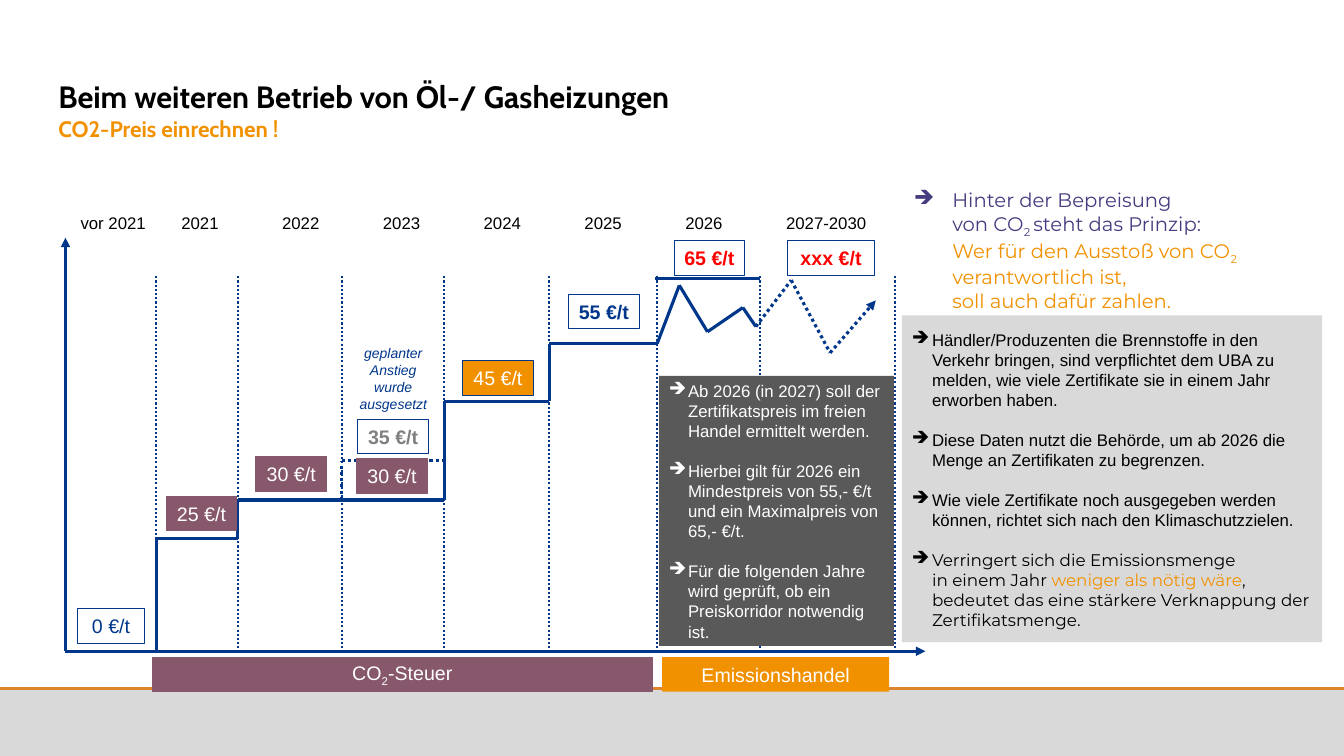
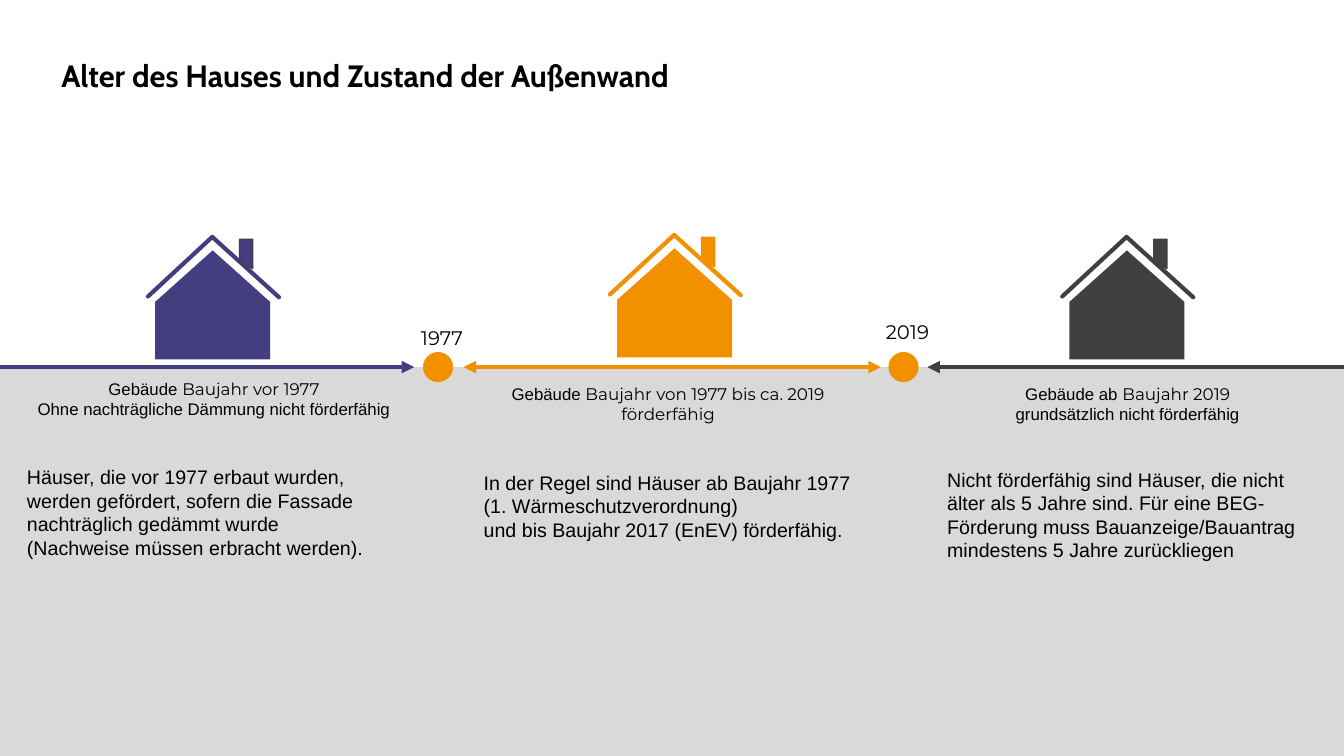
import copy
import dataclasses
import itertools
import typing

import lxml.etree
import pptx
import pptx.dml.color
import pptx.enum.dml
import pptx.enum.shapes
import pptx.enum.text
import pptx.oxml.ns
import pptx.util

Cm = pptx.util.Cm
Pt = pptx.util.Pt
SHAPE = pptx.enum.shapes.MSO_SHAPE
ALIGN = pptx.enum.text.PP_ALIGN
ANCHOR = pptx.enum.text.MSO_ANCHOR
DOTTED = pptx.enum.dml.MSO_LINE.ROUND_DOT


@dataclasses.dataclass(frozen=True)
class Theme:
    """Colours, fonts, type sizes and page size in centimetres."""
    black: str = "000000"
    white: str = "FFFFFF"
    band: str = "D9D9D9"
    rule: str = "DE842D"
    orange: str = "F29100"
    violet: str = "443D7F"
    blue: str = "00378B"
    plum: str = "87586B"
    slate: str = "595959"
    dark: str = "404040"
    muted: str = "808080"
    red: str = "FF0000"
    sans: str = "Arial"
    display: str = "Cabin"
    accent: str = "Montserrat"
    title: int = 22
    subtitle: int = 16
    body: int = 14
    small: int = 12
    note: int = 10
    width: float = 33.87
    height: float = 19.05


T = Theme()


@dataclasses.dataclass
class Box:
    """A region of a slide with its top left corner in centimetres."""
    s: typing.Any
    x: float = 0
    y: float = 0

    def at(self, x, y):
        """Return slide coordinates of a point in the region."""
        return Cm(self.x + x), Cm(self.y + y)


@dataclasses.dataclass
class Run:
    """A piece of text in one style."""
    text: str
    size: int = T.small
    color: str = T.black
    font: str = T.sans
    bold: bool = False
    italic: bool = False
    sub: bool = False


@dataclasses.dataclass
class Para:
    """A paragraph with alignment, hanging bullet indent and space before."""
    runs: list
    align: typing.Any = ALIGN.LEFT
    indent: float = 0
    before: float = 0
    tabs: tuple = ()


def rgb(color):
    """Return an RGB colour object."""
    return pptx.dml.color.RGBColor.from_string(color)


def child(parent, tag, **attributes):
    """Append a DrawingML element."""
    return lxml.etree.SubElement(parent, pptx.oxml.ns.qn("a:" + tag), **attributes)


def add_run(p, run):
    """Add a styled run, with line breaks in the same style."""
    lines = run.text.split("\n")
    for i, line in enumerate(lines):
        if line:
            r = p.add_run()
            r.text = line
            r.font.size, r.font.name = Pt(run.size), run.font
            r.font.bold, r.font.italic = run.bold, run.italic
            r.font.color.rgb = rgb(run.color)
            if run.sub:
                r._r.get_or_add_rPr().set("baseline", "-25000")
        if i < len(lines) - 1:
            p.add_line_break()
            p._p[-1].append(copy.deepcopy(r._r.rPr))


def write(tf, paras):
    """Fill a text frame with paragraphs."""
    tf.word_wrap = True
    for i, para in enumerate(paras):
        p = tf.paragraphs[0] if i == 0 else tf.add_paragraph()
        p.alignment = para.align
        if para.before:
            p.space_before = Pt(para.before)
        pPr = p._p.get_or_add_pPr()
        if para.indent:
            pPr.set("marL", str(Cm(para.indent)))
            pPr.set("indent", str(-Cm(para.indent)))
            child(pPr, "buChar", char="➔")
        if para.tabs:
            stops = child(pPr, "tabLst")
            for stop in para.tabs:
                child(stops, "tab", pos=str(Cm(stop)), algn="l")
        for run in para.runs:
            add_run(p, run)


def text(box, x, y, w, h, paras):
    """Place a text box."""
    tb = box.s.shapes.add_textbox(*box.at(x, y), Cm(w), Cm(h))
    write(tb.text_frame, paras)


def shape(box, x, y, w, h, fill=None, line=None, weight=0.75, kind=SHAPE.RECTANGLE):
    """Place a preset shape."""
    sp = box.s.shapes.add_shape(kind, *box.at(x, y), Cm(w), Cm(h))
    sp.shadow.inherit = False
    if fill:
        sp.fill.solid()
        sp.fill.fore_color.rgb = rgb(fill)
    else:
        sp.fill.background()
    if line:
        sp.line.color.rgb = rgb(line)
        sp.line.width = Pt(weight)
    else:
        sp.line.fill.background()
    return sp


def label(box, x, y, w, runs, fill=None, line=None):
    """Place a one-line label in a rectangle."""
    sp = shape(box, x, y, w, 0.87, fill, line)
    tf = sp.text_frame
    tf.margin_left = tf.margin_right = tf.margin_top = tf.margin_bottom = 0
    tf.vertical_anchor = ANCHOR.MIDDLE
    write(tf, [Para(runs, ALIGN.CENTER)])


def lines(box, points, color=T.blue, weight=2.25, dash=None, head=False, tail=False, cap="flat"):
    """Join points by connectors, with optional arrowheads at the ends."""
    segments = list(itertools.pairwise(points))
    for i, (start, end) in enumerate(segments):
        c = box.s.shapes.add_connector(
            pptx.enum.shapes.MSO_CONNECTOR.STRAIGHT, *box.at(*start), *box.at(*end))
        c.line.color.rgb = rgb(color)
        c.line.width = Pt(weight)
        if dash:
            c.line.dash_style = dash
        ln = c.line._get_or_add_ln()
        ln.set("cap", cap)
        if head and i == 0:
            child(ln, "headEnd", type="triangle")
        if tail and i == len(segments) - 1:
            child(ln, "tailEnd", type="triangle")
        child(c._element.spPr, "effectLst")


def new_slide(prs):
    """Add a blank slide with the footer band."""
    s = prs.slides.add_slide(prs.slide_layouts[6])
    footer = Box(s, 0, 17.35)
    shape(footer, 0, 0, T.width, 1.7, T.band)
    lines(footer, [(0, 0), (T.width, 0)], T.rule, 1.5)
    return s


def title(box, heading, subtitle=None):
    """Place the heading and an optional second line."""
    paras = [Para([Run(heading, T.title, font=T.display, bold=True)])]
    if subtitle:
        paras.append(Para([Run(subtitle, T.subtitle, T.orange, T.display, True)]))
    text(box, 0, 0, 31.9, 2, paras)


def bullets(items, indent, color=T.black):
    """Turn lists of runs or plain strings into spaced bullet paragraphs."""
    return [Para([Run(item, color=color)] if isinstance(item, str) else item,
                 indent=indent, before=14 if i else 0)
            for i, item in enumerate(items)]


def price_chart(box):
    """Draw the stepped price path with its axes, labels and remarks."""
    base, top = 11.18, 1.73
    years = ["vor 2021", *map(str, range(2021, 2027)), "2027-2030"]
    tabs = tuple(2.54 * i for i in range(1, len(years)))
    text(box, 0.13, 0, 23.34, 0.76, [Para([Run("\t".join(years))], tabs=tabs)])
    lines(box, [(0, base), (0, 0.76)], tail=True)
    lines(box, [(0, base), (21.67, base)], tail=True)
    for x in (2.29, 4.34, 6.96, 9.55, 12.19, 14.91, 17.5, 20.91):
        lines(box, [(x, top), (x, base + 0.05)], weight=1.5, dash=DOTTED)

    lines(box, [(2.29, base), (2.29, 8.33), (4.34, 8.33), (4.34, 7.37), (9.55, 7.37),
                (9.55, 4.88), (12.19, 4.88), (12.19, 3.43), (14.91, 3.43),
                (15.47, 1.96), (16.18, 3.13), (17.07, 2.52), (17.4, 3)])
    lines(box, [(14.86, 1.78), (17.5, 1.78)])
    lines(box, [(6.96, 7.37), (6.96, 6.38), (9.55, 6.38)], dash=DOTTED)
    lines(box, [(17.4, 3), (18.29, 1.83), (19.27, 3.66), (20.42, 2.34)], dash=DOTTED, tail=True)

    prices = [
        (0.31, 10.11, 1.68, "0 €/t", T.blue, False, None, T.blue),
        (2.54, 7.27, 1.78, "25 €/t", T.white, False, T.plum, T.plum),
        (4.8, 6.28, 1.78, "30 €/t", T.white, False, T.plum, T.plum),
        (7.34, 6.33, 1.78, "30 €/t", T.white, False, T.plum, T.plum),
        (7.37, 5.34, 1.78, "35 €/t", T.muted, True, None, T.blue),
        (10.01, 3.86, 1.78, "45 €/t", T.white, False, T.orange, T.blue),
        (12.68, 2.19, 1.78, "55 €/t", T.blue, True, None, T.blue),
        (15.34, 0.84, 1.78, "65 €/t", T.red, True, None, T.blue),
        (18.19, 0.84, 2.21, "xxx €/t", T.red, True, None, T.blue),
    ]
    for x, y, w, price, color, bold, fill, line in prices:
        label(box, x, y, w, [Run(price, T.body, color, bold=bold)], fill, line)

    white = [Run(t, T.body, T.white, sub=t == "2") for t in ("CO", "2", "-Steuer")]
    label(box, 2.19, 11.33, 12.6, white, T.plum, T.plum)
    label(box, 15.04, 11.33, 5.72, [Run("Emissionshandel", T.body, T.white)], T.orange)

    text(box, 7.09, 3.33, 2.34, 1.96, [Para(
        [Run("geplanter Anstieg wurde ausgesetzt", T.note, T.blue, italic=True)], ALIGN.CENTER)])
    remarks = shape(box, 14.96, 4.24, 5.92, 6.81, T.slate)
    remarks.text_frame.vertical_anchor = ANCHOR.MIDDLE
    write(remarks.text_frame, bullets([
        "Ab 2026 (in 2027) soll der Zertifikatspreis im freien Handel ermittelt werden.",
        "Hierbei gilt für 2026 ein Mindestpreis von 55,- €/t und ein Maximalpreis von 65,- €/t.",
        "Für die folgenden Jahre wird geprüft, ob ein Preiskorridor notwendig ist.",
    ], 0.48, T.white))


def principle_panel(box):
    """Place the principle and the grey panel of explanations."""
    principle = [
        ("Hinter der Bepreisung \nvon CO", T.violet), ("2 ", T.violet),
        ("steht das Prinzip: \n", T.violet), ("Wer für den Ausstoß von CO", T.orange),
        ("2 ", T.orange), ("verantwortlich ist, \nsoll auch dafür zahlen.", T.orange)]
    text(box, 0.05, 0, 10.72, 3.5, [Para(
        [Run(t, T.body, c, T.accent, sub=t == "2 ") for t, c in principle], indent=0.97)])
    shape(box, 0, 3.33, 10.59, 8.23, T.band)
    text(box, 0, 3.56, 10.74, 7.95, bullets([
        "Händler/Produzenten die Brennstoffe in den Verkehr bringen, sind verpflichtet dem UBA "
        "zu melden, wie viele Zertifikate sie in einem Jahr erworben haben.",
        "Diese Daten nutzt die Behörde, um ab 2026 die Menge an Zertifikaten zu begrenzen.",
        "Wie viele Zertifikate noch ausgegeben werden können, richtet sich nach den "
        "Klimaschutzzielen.",
        [Run("Verringert sich die Emissionsmenge \nin einem Jahr ", font=T.accent),
         Run("weniger als nötig wäre", color=T.orange, font=T.accent),
         Run(", bedeutet das eine stärkere Verknappung der Zertifikatsmenge.", font=T.accent)],
    ], 0.51))


def house(box, color, edge):
    """Draw a house with roof and chimney."""
    shape(box, 0.18, 0.34, 2.9, 1.3, color, kind=SHAPE.ISOSCELES_TRIANGLE)
    shape(box, 0.18, 1.64, 2.9, 1.45, color)
    lines(box, [(0, 1.5), (1.62, 0), (3.3, 1.52)], color, 3, cap="rnd")
    chimney = shape(box, 2.31, 0.06, 0.33, 0.74, color, edge, 1, SHAPE.FLOWCHART_MANUAL_INPUT)
    chimney._element.spPr.xfrm.set("flipV", "1")


def period(box, w, caption, body, gap):
    """Place a centred two-line caption above a paragraph of body text."""
    paras = [Para(runs, ALIGN.CENTER) for runs in caption]
    paras += [Para([Run(t, T.body)], before=0 if i else gap) for i, t in enumerate(body)]
    text(box, 0, 0, w, 4.8, paras)


def timeline(box):
    """Draw the arrows and the dated dots along the edge of the band."""
    lines(box, [(0, 0), (10.44, 0)], T.violet, 3, tail=True)
    lines(box, [(11.68, 0), (22.2, 0)], T.orange, 3, head=True, tail=True)
    lines(box, [(T.width, 0), (23.37, 0)], T.dark, 3, tail=True)
    for x, year, y in ((11.04, "1977", -1.17), (22.77, "2019", -1.32)):
        shape(box, x - 0.37, -0.37, 0.74, 0.74, T.orange, T.orange, 0.5, SHAPE.OVAL)
        text(box, x - 1.12, y, 2.44, 0.86,
             [Para([Run(year, T.body, font=T.accent)], ALIGN.CENTER)])


def price_slide(prs):
    """Build the slide on the carbon price."""
    s = new_slide(prs)
    title(Box(s, 1.22, 1.84), "Beim weiteren Betrieb von Öl-/ Gasheizungen",
          "CO2-Preis einrechnen !")
    price_chart(Box(s, 1.65, 5.23))
    principle_panel(Box(s, 22.73, 4.62))


def age_slide(prs):
    """Build the slide on the age of the house."""
    s = new_slide(prs)
    shape(Box(s, 0, 9.25), 0, 0, T.width, 8.28, T.band)
    title(Box(s, 1.3, 1.3), "Alter des Hauses und Zustand der Außenwand")
    period(Box(s, 0.43, 9.42), 9.93,
           [[Run("Gebäude "), Run("Baujahr vor 1977", font=T.accent)],
            [Run("Ohne nachträgliche Dämmung nicht förderfähig")]],
           ["Häuser, die vor 1977 erbaut wurden, werden gefördert, sofern die Fassade "
            "nachträglich gedämmt wurde", "(Nachweise müssen erbracht werden)."], 33)
    period(Box(s, 11.94, 9.55), 9.8,
           [[Run("Gebäude "), Run("Baujahr von 1977 bis ca. 2019", font=T.accent)],
            [Run("förderfähig", font=T.accent)]],
           ["In der Regel sind Häuser ab Baujahr 1977 (1. Wärmeschutzverordnung)",
            "und bis Baujahr 2017 (EnEV) förderfähig."], 33)
    period(Box(s, 23.62, 9.55), 9.6,
           [[Run("Gebäude ab "), Run("Baujahr 2019", font=T.accent)],
            [Run("grundsätzlich nicht förderfähig")]],
           ["Nicht förderfähig sind Häuser, die nicht älter als 5 Jahre sind. Für eine "
            "BEG-Förderung muss Bauanzeige/Bauantrag mindestens 5 Jahre zurückliegen"], 31)
    timeline(Box(s, 0, 9.25))
    house(Box(s, 3.73, 5.97), T.violet, T.dark)
    house(Box(s, 15.37, 5.92), T.orange, T.orange)
    house(Box(s, 26.77, 5.97), T.dark, T.dark)


def main():
    """Build and save the presentation."""
    prs = pptx.Presentation()
    prs.slide_width, prs.slide_height = Cm(T.width), Cm(T.height)
    price_slide(prs)
    age_slide(prs)
    prs.save("out.pptx")


if __name__ == "__main__":
    main()
